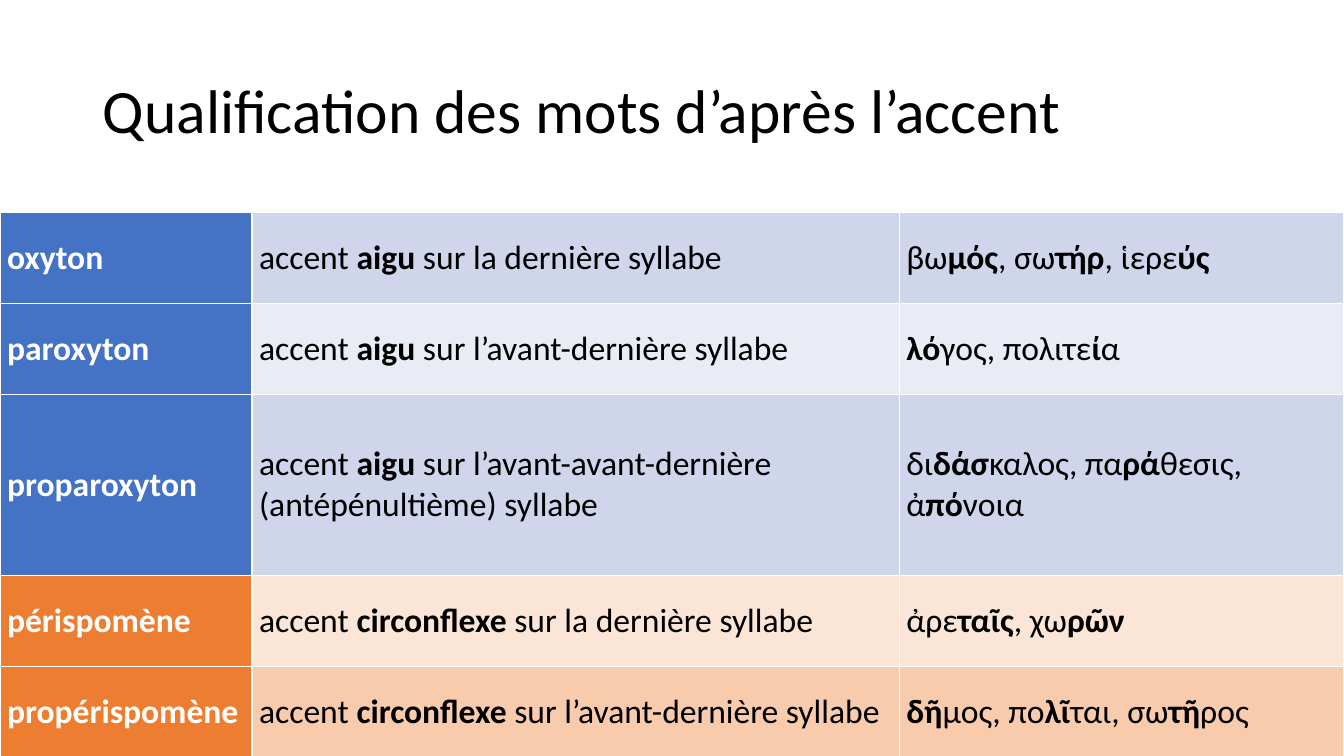
from lxml import etree
from pptx import Presentation
from pptx import util as u
from pptx.dml.color import RGBColor
from pptx.enum import text
from pptx.oxml import ns

hues = {"ink": "000000", "white": "FFFFFF", "blue": "4472C4", "mist": "CFD5EA",
        "pale": "E9EBF5", "orange": "ED7D31", "cream": "FBE5D6", "peach": "F8CBAD"}


def add_run(para, words, size, hue, bold=False):
    run = para.add_run()
    run.text = words
    run.font.name = "Calibri"
    run.font.size = u.Pt(size)
    run.font.bold = bold
    run.font.color.rgb = RGBColor.from_string(hues[hue])


def add_edges(cell):
    props = cell._tc.get_or_add_tcPr()
    for side in ("lnL", "lnR", "lnT", "lnB"):
        line = etree.SubElement(props, ns.qn(f"a:{side}"), w=str(u.Pt(1)))
        fill = etree.SubElement(line, ns.qn("a:solidFill"))
        etree.SubElement(fill, ns.qn("a:srgbClr"), val=hues["white"])


deck = Presentation()
deck.slide_width, deck.slide_height = u.Inches(13.33), u.Inches(7.5)
slide = deck.slides.add_slide(deck.slide_layouts[5])

# Title
title = slide.shapes.title
title.left, title.top = u.Inches(0.92), u.Inches(0.4)
title.width, title.height = u.Inches(11.5), u.Inches(1.45)
frame = title.text_frame
frame.word_wrap = True
frame.auto_size = text.MSO_AUTO_SIZE.NONE
frame.vertical_anchor = text.MSO_ANCHOR.MIDDLE
para = frame.paragraphs[0]
para.alignment = text.PP_ALIGN.LEFT
para.line_spacing = 0.9
add_run(para, "Qualification des mots d’après l’accent", 44, "ink")

# Accent classes: head fill, body fill, then the three texts; *stars* mark bold
rows = [
    ("blue", "mist", "*oxyton*", "accent *aigu* sur la dernière syllabe",
     "βω*μός*, σω*τήρ*, ἱερε*ύς*"),
    ("blue", "pale", "*paroxyton*", "accent *aigu* sur l’avant-dernière syllabe",
     "*λό*γος, πολιτε*ί*α"),
    ("blue", "mist", "*proparoxyton*",
     "accent *aigu* sur l’avant-avant-dernière (antépénultième) syllabe",
     "δι*δάσ*καλος, πα*ρά*θεσις, ἀ*πό*νοια"),
    ("orange", "cream", "*périspomène*", "accent *circonflexe* sur la dernière syllabe",
     "ἀρε*ταῖς*, χω*ρῶν*"),
    ("orange", "peach", "*propérispomène*",
     "accent *circonflexe* sur l’avant-dernière syllabe",
     "*δῆ*μος, πο*λῖ*ται, σω*τῆ*ρος"),
]

# Table grid
table = slide.shapes.add_table(5, 3, 0, u.Inches(2.11), u.Inches(13.33),
                               u.Inches(5.39)).table
table.first_row = table.horz_banding = False
for col, width in zip(table.columns, (2.5, 6.42, 4.41)):
    col.width = u.Inches(width)
for row, height in zip(table.rows, (0.9, 0.9, 1.8, 0.9, 0.9)):
    row.height = u.Inches(height)

# Table cells
for r, (head, body, *words) in enumerate(rows):
    for c, word in enumerate(words):
        cell = table.cell(r, c)
        add_edges(cell)
        cell.fill.solid()
        cell.fill.fore_color.rgb = RGBColor.from_string(hues[body if c else head])
        cell.vertical_anchor = text.MSO_ANCHOR.MIDDLE
        cell.margin_left = cell.margin_right = u.Inches(0.07)
        cell.margin_top = cell.margin_bottom = 0
        para = cell.text_frame.paragraphs[0]
        for i, part in enumerate(word.split("*")):
            if part:
                add_run(para, part, 24, "ink" if c else "white", i % 2 == 1)

deck.save("out.pptx")
